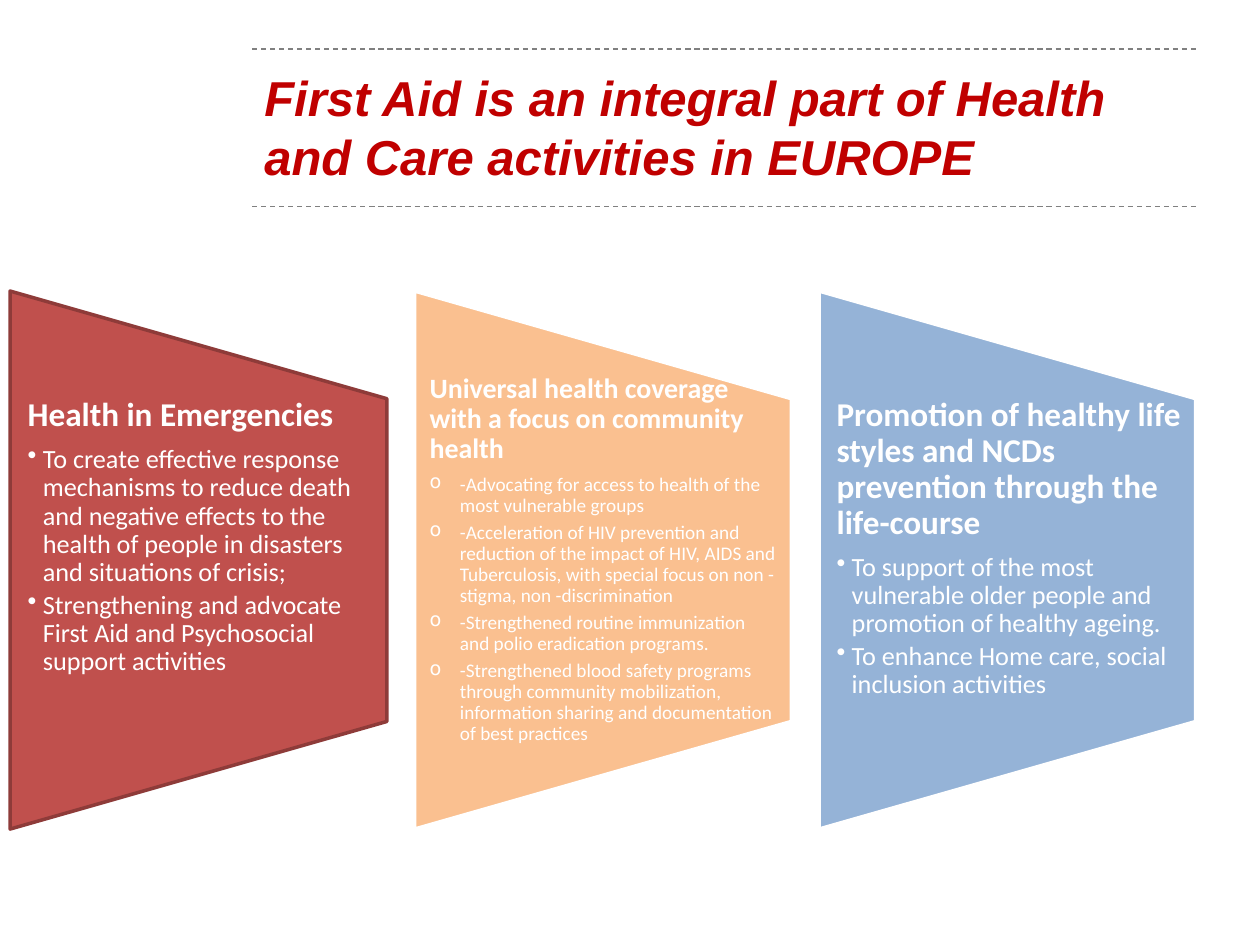
from lxml import etree
from pptx import Presentation
from pptx import util as u
from pptx.dml.color import RGBColor
from pptx.enum import dml, shapes, text
from pptx.oxml.ns import qn


def rgb(value):
    return RGBColor.from_string(value)


def add_paragraph(tf, first, content, size, color, font, bold=False, italic=False):
    p = tf.paragraphs[0] if first else tf.add_paragraph()
    p.alignment = text.PP_ALIGN.LEFT
    r = p.add_run()
    r.text = content
    r.font.name, r.font.size, r.font.color.rgb = font, u.Pt(size), rgb(color)
    r.font.bold, r.font.italic = bold, italic
    return p


prs = Presentation()
prs.slide_width, prs.slide_height = u.Inches(10), u.Inches(7.5)
s = prs.slides.add_slide(prs.slide_layouts[6])

# Dashed rules above and below the title
for y in (0.39, 1.64):
    rule = s.shapes.add_connector(shapes.MSO_CONNECTOR.STRAIGHT, u.Inches(2), u.Inches(y),
                                  u.Inches(9.5), u.Inches(y))
    rule.line.color.rgb = rgb("808080")
    rule.line.width = u.Pt(0.75)
    rule.line.dash_style = dml.MSO_LINE.DASH
    etree.SubElement(rule._element.spPr, qn("a:effectLst"))

# Title
title = s.shapes.add_textbox(u.Inches(2), u.Inches(0.38), u.Inches(7.5), u.Inches(1.25))
tf = title.text_frame
tf.word_wrap = True
tf.vertical_anchor = text.MSO_ANCHOR.MIDDLE
add_paragraph(tf, True, "First Aid is an integral part of Health and Care activities in EUROPE",
              28, "C00000", "Arial", bold=True, italic=True)

# Panels: fill, line, anchor, inset, heading size, item size, bullet, indent, item spacing, texts
TOP, MIDDLE = text.MSO_ANCHOR.TOP, text.MSO_ANCHOR.MIDDLE
panels = [
    ("C0504D", "8E3B39", TOP, 0.13, 19, 15, "•", 0.12, 0.15, "Health in Emergencies", [
        "To create effective response mechanisms to reduce death and negative effects to the "
        "health of people in disasters and situations of crisis;",
        "Strengthening and advocate First Aid and Psychosocial support activities"]),
    ("FAC090", "FFFFFF", MIDDLE, 0.11, 16, 11, "o", 0.24, 0.35,
     "Universal health coverage with a focus on community health", [
         "-Advocating for access to health of the most vulnerable groups",
         "-Acceleration of HIV prevention and reduction of the impact of HIV, AIDS and "
         "Tuberculosis, with special focus on non - stigma, non -discrimination",
         "-Strengthened routine immunization and polio eradication programs.",
         "-Strengthened blood safety programs through community mobilization, information "
         "sharing and documentation of best practices"]),
    ("95B3D7", "FFFFFF", TOP, 0.13, 19, 15, "•", 0.12, 0.15,
     "Promotion of healthy life styles and NCDs prevention through the life-course", [
         "To support of the most vulnerable older people and promotion of healthy ageing.",
         "To enhance Home care, social inclusion activities"]),
]
PITCH = 3.21

for i, (fill, line, anchor, inset, head_size, item_size, bullet, indent, spacing,
        heading, items) in enumerate(panels):
    # Trapezoid turned on its side
    sp = s.shapes.add_shape(shapes.MSO_SHAPE.FLOWCHART_MANUAL_OPERATION,
                            u.Inches(-0.56 + i * PITCH), u.Inches(2.95),
                            u.Inches(4.27), u.Inches(2.99))
    sp.rotation = 270
    sp.shadow.inherit = False
    sp.fill.solid()
    sp.fill.fore_color.rgb = rgb(fill)
    sp.line.color.rgb = rgb(line)
    sp.line.width = u.Pt(2)

    # Heading and bulleted items
    box = s.shapes.add_textbox(u.Inches(0.09 + i * PITCH), u.Inches(3.16),
                               u.Inches(2.99), u.Inches(2.56))
    tf = box.text_frame
    tf.word_wrap = True
    tf.vertical_anchor = anchor
    tf.margin_left = tf.margin_right = u.Inches(inset)
    tf.margin_top = tf.margin_bottom = 0
    p = add_paragraph(tf, True, heading, head_size, "FFFFFF", "Calibri", bold=True)
    p.line_spacing = 0.9
    p.space_after = u.Pt(0.35 * head_size)
    for item in items:
        p = add_paragraph(tf, False, item, item_size, "FFFFFF", "Calibri")
        pPr = p._p.get_or_add_pPr()
        pPr.set("marL", str(u.Inches(indent)))
        pPr.set("indent", str(-u.Inches(indent)))
        etree.SubElement(pPr, qn("a:buChar"), char=bullet)
        p.line_spacing = 0.9
        p.space_after = u.Pt(spacing * item_size)

prs.save("out.pptx")
